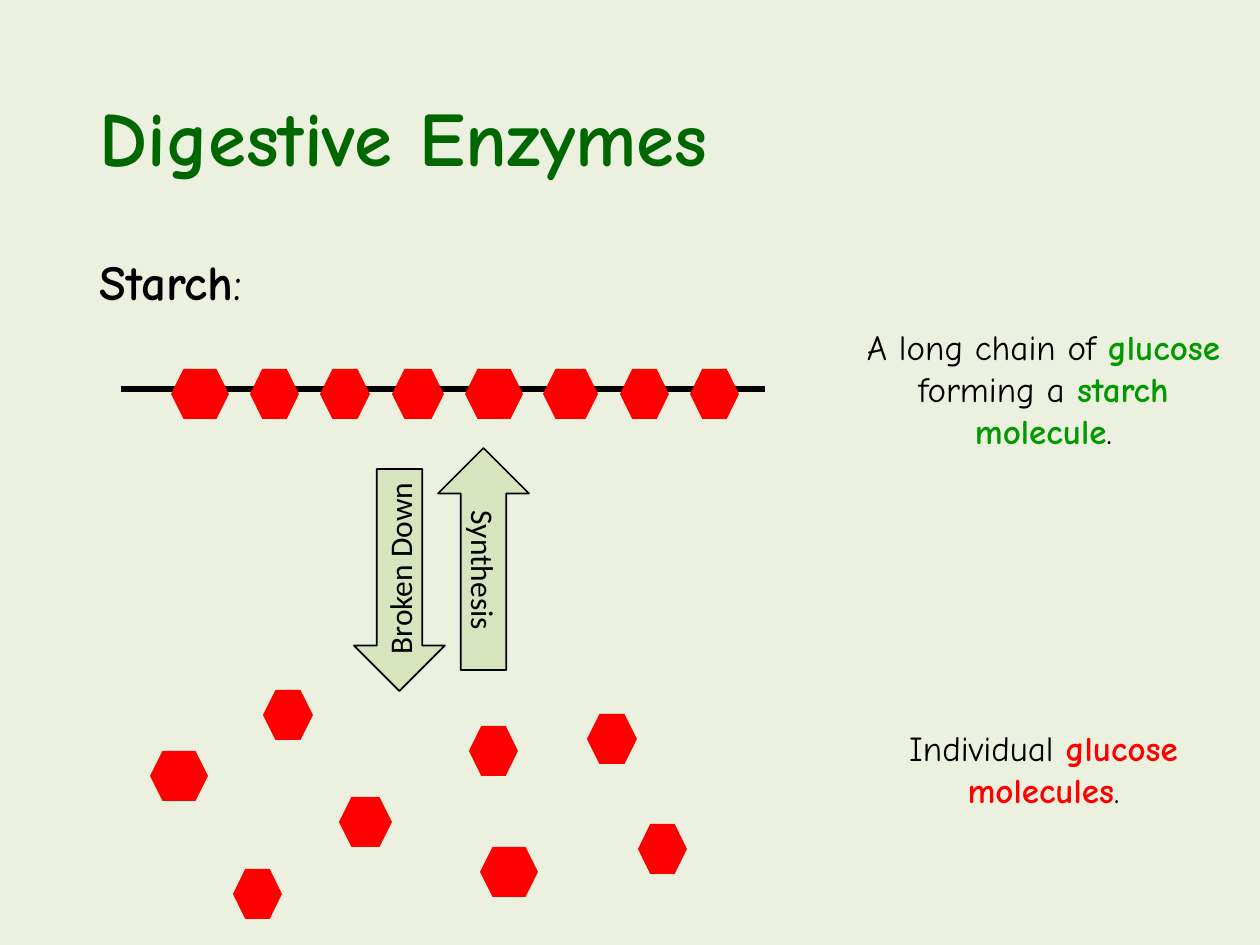
from lxml.etree import SubElement
from pptx import Presentation
from pptx.dml.color import RGBColor
from pptx.enum.shapes import MSO_CONNECTOR as Connector, MSO_SHAPE as Shape
from pptx.enum.text import MSO_ANCHOR as Anchor, MSO_AUTO_SIZE as AutoSize, PP_ALIGN as Align
from pptx.oxml.ns import qn
from pptx.util import Pt

EMU_PER_PX = 914400 / 126
COLORS = {
    "background": "EBF1DE",
    "title": "006600",
    "text": "000000",
    "starch": "009900",
    "glucose": "FF0000",
    "arrow": "D7E4BD",
}
HEXAGON_HEIGHT = 50
CHAIN_TOP = 369
# left, width
CHAIN = [(171, 58), (250, 49), (320, 50), (392, 52),
         (465, 58), (543, 55), (620, 49), (690, 49)]
# left, top, width
LOOSE_GLUCOSE = [(150, 751, 58), (263, 690, 50), (339, 797, 53), (469, 726, 49),
                 (480, 847, 58), (587, 714, 50), (233, 869, 49), (638, 824, 49)]


def px(length):
    return round(length * EMU_PER_PX)


def color(name):
    return RGBColor.from_string(COLORS[name])


class SlideBuilder:
    font = "Comic Neue"

    def __init__(self, slide):
        self.slide = slide
        background = slide.background.fill
        background.solid()
        background.fore_color.rgb = color("background")

    def add_runs(self, paragraph, runs, size, align, font=None):
        """Fill a paragraph with (text, color name, bold) runs."""
        paragraph.alignment = align
        paragraph.font.name = font or self.font
        paragraph.font.size = Pt(size)
        for text, color_name, bold in runs:
            run = paragraph.add_run()
            run.text = text
            run.font.bold = bold
            run.font.color.rgb = color(color_name)

    def placeholder(self, index, box, runs, size, anchor):
        shape = self.slide.placeholders[index]
        shape.left, shape.top, shape.width, shape.height = map(px, box)
        frame = shape.text_frame
        frame.auto_size = AutoSize.NONE
        frame.word_wrap = True
        frame.vertical_anchor = anchor
        paragraph = frame.paragraphs[0]
        properties = paragraph._p.get_or_add_pPr()
        properties.set("marL", "0")
        properties.set("indent", "0")
        SubElement(properties, qn("a:buNone"))
        paragraph.line_spacing = 0.9
        paragraph.space_before = Pt(0)
        self.add_runs(paragraph, runs, size, Align.LEFT)

    def caption(self, box, runs):
        frame = self.slide.shapes.add_textbox(*map(px, box)).text_frame
        frame.word_wrap = True
        frame.auto_size = AutoSize.SHAPE_TO_FIT_TEXT
        self.add_runs(frame.paragraphs[0], runs, 20, Align.CENTER)

    def shape(self, shapes, kind, box, fill):
        shape = shapes.add_shape(kind, *map(px, box))
        shape.shadow.inherit = False
        shape.fill.solid()
        shape.fill.fore_color.rgb = color(fill)
        shape.line.fill.background()
        return shape

    def hexagon(self, shapes, left, top, width):
        self.shape(shapes, Shape.HEXAGON, (left, top, width, HEXAGON_HEIGHT), "glucose")

    def chain(self):
        """Draw the starch molecule: a bond line with glucose units on it."""
        shapes = self.slide.shapes.add_group_shape().shapes
        bond = shapes.add_connector(Connector.STRAIGHT, px(121), px(389), px(765), px(389))
        bond.line.color.rgb = color("text")
        bond.line.width = Pt(3)
        SubElement(bond._element.spPr, qn("a:effectLst"))
        for left, width in CHAIN:
            self.hexagon(shapes, left, CHAIN_TOP, width)

    def arrow(self, left, top, label, rotation=0):
        shape = self.shape(self.slide.shapes, Shape.DOWN_ARROW, (left, top, 91, 222), "arrow")
        shape.rotation = rotation
        shape.line.color.rgb = color("text")
        shape.line.width = Pt(1)
        frame = shape.text_frame
        frame.vertical_anchor = Anchor.MIDDLE
        frame._txBody.bodyPr.set("vert", "vert270")
        self.add_runs(frame.paragraphs[0], [(label, "text", False)], 18, Align.CENTER, "Calibri")


def main():
    presentation = Presentation()
    presentation.slide_width, presentation.slide_height = px(1260), px(945)
    slide = presentation.slides.add_slide(presentation.slide_layouts[1])
    builder = SlideBuilder(slide)

    builder.placeholder(0, (87, 50, 1086, 183),
                        [("Digestive Enzymes", "title", True)], 44, Anchor.MIDDLE)
    builder.placeholder(1, (87, 252, 1086, 600),
                        [("Starch", "text", True), (":", "text", False)], 28, Anchor.TOP)
    builder.chain()
    builder.caption((850, 319, 387, 140), [
        ("A long chain of ", "text", False),
        ("glucose ", "starch", True),
        ("forming a", "text", False),
        (" starch molecule", "starch", True),
        (".", "text", False),
    ])
    for left, top, width in LOOSE_GLUCOSE:
        builder.hexagon(slide.shapes, left, top, width)
    builder.caption((850, 720, 387, 97), [
        ("Individual ", "text", False),
        ("glucose molecules", "glucose", True),
        (".", "text", False),
    ])
    builder.arrow(354, 469, "Broken Down")
    builder.arrow(438, 448, "Synthesis", rotation=180)

    presentation.save("out.pptx")


if __name__ == "__main__":
    main()
